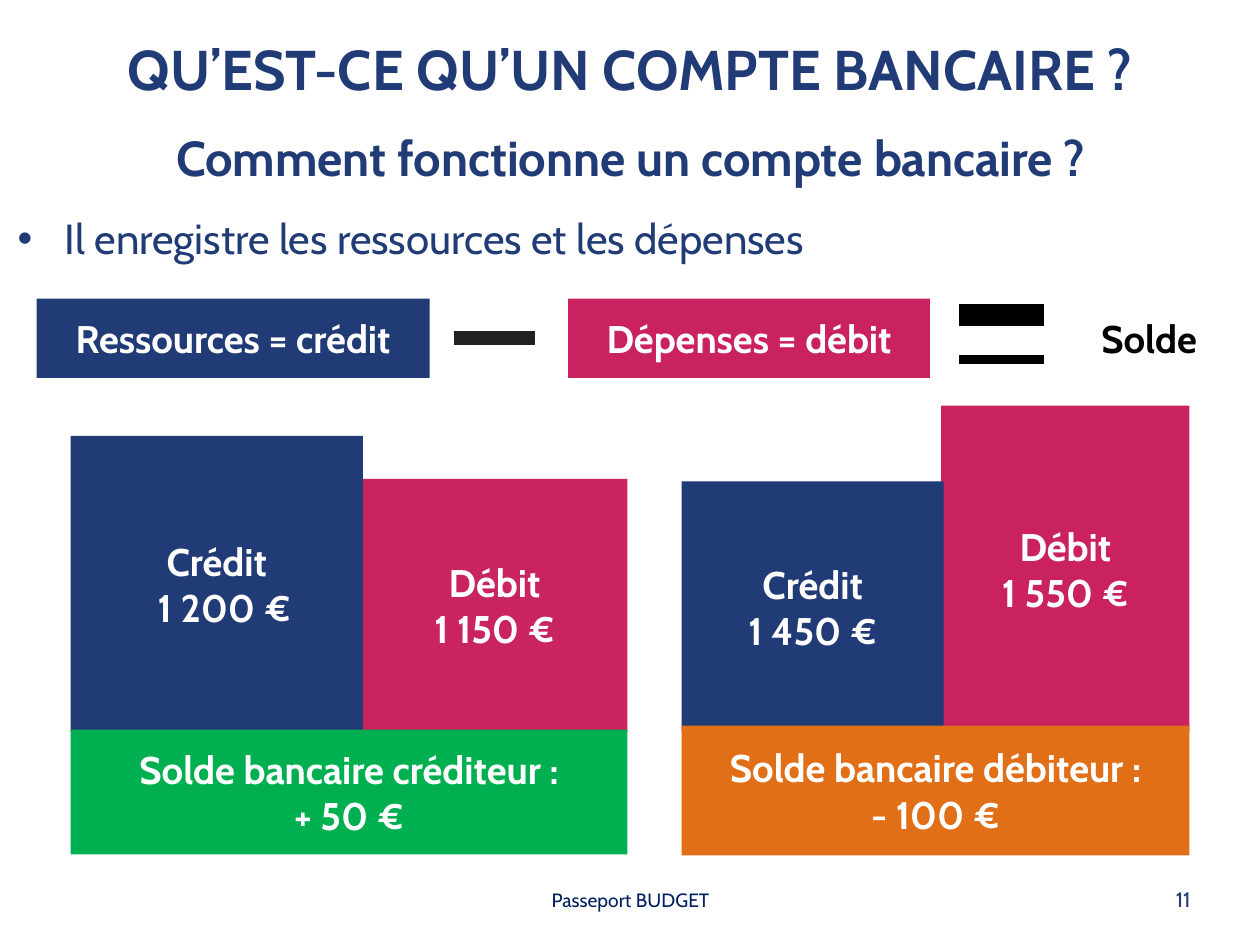
from typing import NamedTuple

from pptx import Presentation
from pptx.dml.color import RGBColor
from pptx.enum.shapes import MSO_SHAPE
from pptx.enum.text import MSO_ANCHOR, MSO_AUTO_SIZE, PP_ALIGN
from pptx.util import Inches, Pt

NAVY = RGBColor(0x21, 0x3B, 0x76)
DEEP = RGBColor(0x00, 0x20, 0x60)
PINK = RGBColor(0xCA, 0x22, 0x60)
ROSE = RGBColor(0xC9, 0x23, 0x60)
GREEN = RGBColor(0x00, 0xB0, 0x50)
ORANGE = RGBColor(0xE0, 0x6F, 0x17)
GREY = RGBColor(0x21, 0x21, 0x21)
BLACK = RGBColor(0, 0, 0)
WHITE = RGBColor(0xFF, 0xFF, 0xFF)

FONT = "Cabin"
COLS, ROWS = 100, 75
INSET = Inches(0.05)

deck = Presentation()
deck.slide_width, deck.slide_height = Inches(10), Inches(7.5)
CELL_W, CELL_H = deck.slide_width / COLS, deck.slide_height / ROWS
slide = deck.slides.add_slide(deck.slide_layouts[1])
shapes = slide.shapes


class Area(NamedTuple):
    """Left, top, width and height in grid cells."""
    col: float
    row: float
    wide: float
    high: float

    def emu(self) -> tuple[int, ...]:
        sizes = (CELL_W, CELL_H, CELL_W, CELL_H)
        return tuple(round(n * size) for n, size in zip(self, sizes))


class Box(NamedTuple):
    area: Area
    fill: RGBColor
    lines: tuple[str, ...]
    ink: RGBColor = WHITE
    shift: float = 0  # left margin of the last line, in columns


class Note(NamedTuple):
    area: Area
    text: str
    size: int
    ink: RGBColor
    bold: bool = False
    align: PP_ALIGN = PP_ALIGN.CENTER
    anchor: MSO_ANCHOR = MSO_ANCHOR.MIDDLE
    wrap: bool = True


def write(frame, lines: tuple[str, ...], size: int, ink: RGBColor,
          bold: bool, align: PP_ALIGN) -> None:
    frame.text = "\n".join(lines)
    for para in frame.paragraphs:
        para.alignment = align
        para.space_before = Pt(0)
        font = para.font
        font.name, font.size, font.bold = FONT, Pt(size), bold
        font.color.rgb = ink


def trim(frame) -> None:
    """Set the same narrow margin on all sides."""
    frame.margin_left = frame.margin_right = INSET
    frame.margin_top = frame.margin_bottom = INSET


def paint(shape, fill: RGBColor, edged: bool = False) -> None:
    shape.shadow.inherit = False
    shape.fill.solid()
    shape.fill.fore_color.rgb = fill
    if edged:
        shape.line.color.rgb = WHITE
        shape.line.width = Pt(2)
    else:
        shape.line.fill.background()


def draw_box(box: Box) -> None:
    shape = shapes.add_shape(MSO_SHAPE.RECTANGLE, *box.area.emu())
    paint(shape, box.fill)
    frame = shape.text_frame
    trim(frame)
    frame.word_wrap = True
    frame.vertical_anchor = MSO_ANCHOR.MIDDLE
    write(frame, box.lines, 22, box.ink, True, PP_ALIGN.CENTER)
    if box.shift:
        last = frame.paragraphs[-1]._p.get_or_add_pPr()
        last.set("marL", str(round(box.shift * CELL_W)))


def draw_note(note: Note) -> None:
    frame = shapes.add_textbox(*note.area.emu()).text_frame
    trim(frame)
    frame.word_wrap = note.wrap
    frame.vertical_anchor = note.anchor
    write(frame, (note.text,), note.size, note.ink, note.bold, note.align)


def draw_minus(area: Area) -> None:
    paint(shapes.add_shape(MSO_SHAPE.RECTANGLE, *area.emu()), GREY, True)


def draw_equals(area: Area, bar: float) -> None:
    """Two bars, each bar rows high, at the top and bottom of the area."""
    left, right = area.col, area.col + area.wide
    tops = (area.row, area.row + area.high - bar)
    pen = shapes.build_freeform(left, tops[0], scale=(CELL_W, CELL_H))
    for top in tops:
        pen.move_to(left, top)
        pen.add_line_segments(
            [(right, top), (right, top + bar), (left, top + bar)], close=True)
    paint(pen.convert_to_shape(), BLACK, True)


def fill_holder(holder, area: Area, text: str, size: int,
                bold: bool, align: PP_ALIGN) -> None:
    holder.left, holder.top, holder.width, holder.height = area.emu()
    frame = holder.text_frame
    frame.auto_size = MSO_AUTO_SIZE.NONE
    frame.vertical_anchor = MSO_ANCHOR.TOP
    write(frame, (text,), size, NAVY, bold, align)


BARS = (
    Box(Area(74.7, 32.2, 19.7, 25.9), PINK, ("Débit", "1 550 €")),
    Box(Area(54.1, 38.2, 20.8, 19.9), NAVY, ("Crédit", "1 450 €")),
    Box(Area(54.1, 57.6, 40.3, 10.3), ORANGE,
        ("Solde bancaire débiteur :", "- 100 €")),
    Box(Area(28.7, 38, 21.1, 20.1), ROSE, ("Débit", "1 150 €")),
    Box(Area(5.6, 34.6, 23.2, 23.5), NAVY, ("Crédit", "1 200 €"), shift=1.2),
    Box(Area(5.6, 57.9, 44.2, 9.9), GREEN,
        ("Solde bancaire créditeur :", "+ 50 €")),
)
TOP, HIGH = 23.7, 6.3
TERMS = (
    Box(Area(2.9, TOP, 31.2, HIGH), NAVY, ("Ressources = crédit",)),
    Box(Area(45.1, TOP, 28.7, HIGH), PINK, ("Dépenses = débit",)),
    Box(Area(84.7, TOP, 13, HIGH), WHITE, ("Solde",), BLACK),
)
NOTES = (
    Note(Area(8, 9.6, 84.1, 5.7), "Comment fonctionne un compte bancaire ?",
         28, NAVY, True, anchor=MSO_ANCHOR.TOP),
    Note(Area(34.2, 70, 31.7, 2.9), "Passeport BUDGET", 11, DEEP),
    Note(Area(92.1, 69.9, 2.9, 3), "11", 12, NAVY,
         align=PP_ALIGN.RIGHT, wrap=False),
)

fill_holder(shapes.title, Area(2.8, 2.2, 94.5, 6.6),
            "QU’EST-CE QU’UN COMPTE BANCAIRE ?", 32, True, PP_ALIGN.CENTER)
fill_holder(slide.placeholders[1], Area(0.4, 16.4, 95.6, 5),
            "Il enregistre les ressources et les dépenses", 24, False,
            PP_ALIGN.LEFT)
for item in BARS + TERMS:
    draw_box(item)
draw_minus(Area(35.9, 26.1, 6.7, 1.4))
draw_equals(Area(75.9, 24.5, 6.7, 4.6), 1.6)
for item in NOTES:
    draw_note(item)

deck.save("out.pptx")
